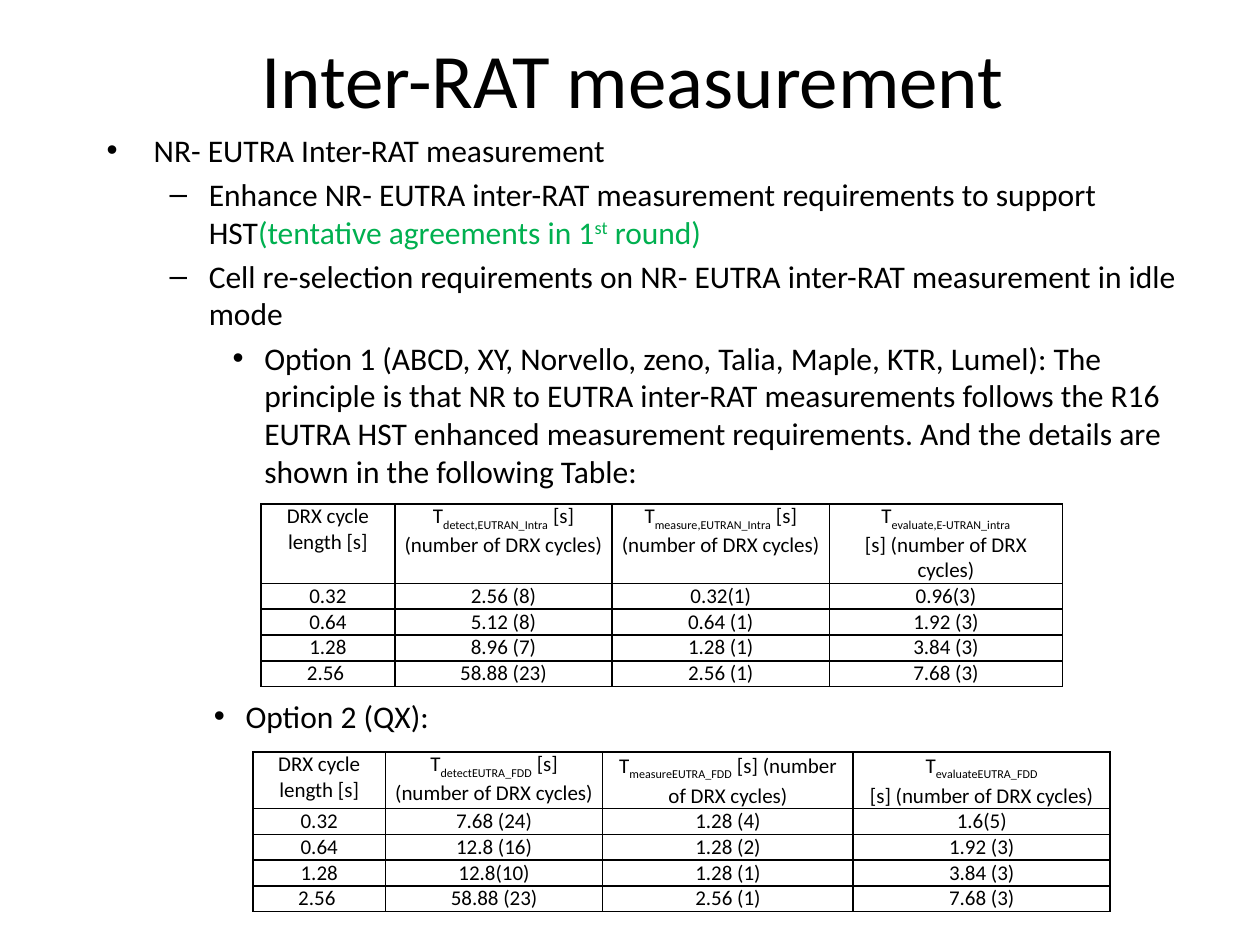
from lxml import etree
from pptx import Presentation
from pptx import util as u
from pptx.dml.color import RGBColor
from pptx.enum import text as t
from pptx.oxml.ns import qn

BLACK = RGBColor(0x00, 0x00, 0x00)
GREEN = RGBColor(0x00, 0xB0, 0x50)
WHITE = RGBColor(0xFF, 0xFF, 0xFF)

SUB, SUP = -25, 30
# Bullet, left margin and hanging indent (cm) for each list level
LEVELS = [("•", 0.95, 0.95), ("–", 2.06, 0.79), ("•", 3.18, 0.64)]

UNIT = "[s] (number of DRX cycles)"
CYCLE = [["DRX cycle length [s]"]]


def head(name, split=False):
    """Header paragraphs: T with a subscript, the unit on its own line if split."""
    term = ["T", (name, SUB)]
    return [term, [UNIT]] if split else [term + [" " + UNIT]]


FIRST = [
    [CYCLE, head("detect,EUTRAN_Intra"), head("measure,EUTRAN_Intra"),
     head("evaluate,E-UTRAN_intra", split=True)],
    ["0.32", "2.56 (8)", "0.32(1)", "0.96(3)"],
    ["0.64", "5.12 (8)", "0.64 (1)", "1.92 (3)"],
    ["1.28", "8.96 (7)", "1.28 (1)", "3.84 (3)"],
    ["2.56 ", "58.88 (23)", "2.56 (1)", "7.68 (3)"],
]
SECOND = [
    [CYCLE, head("detectEUTRA_FDD"), head("measureEUTRA_FDD"),
     head("evaluateEUTRA_FDD", split=True)],
    ["0.32", "7.68 (24)", "1.28 (4)", "1.6(5)"],
    ["0.64", "12.8 (16)", "1.28 (2)", "1.92 (3)"],
    ["1.28", "12.8(10)", "1.28 (1)", "3.84 (3)"],
    ["2.56 ", "58.88 (23)", "2.56 (1)", "7.68 (3)"],
]
POINTS = [
    (0, ["NR- EUTRA Inter-RAT measurement"]),
    (1, ["Enhance NR- EUTRA inter-RAT measurement requirements to support HST",
         ("(tentative agreements in 1", 0, GREEN), ("st", SUP, GREEN),
         (" round)", 0, GREEN)]),
    (1, ["Cell re-selection requirements on NR- EUTRA inter-RAT measurement "
         "in idle mode"]),
    (2, ["Option 1 (ABCD, XY, Norvello, zeno, Talia, Maple, KTR, Lumel): The "
         "principle is that NR to EUTRA inter-RAT measurements follows the R16 "
         "EUTRA HST enhanced measurement requirements. And the details are "
         "shown in the following Table:"]),
]


def write(frame, runs, size=18, align=None, level=None, spacing=None):
    """Add one paragraph; a run is a string or (string, baseline, colour)."""
    para = frame.paragraphs[0]
    if para.runs:
        para = frame.add_paragraph()
    para.alignment = align
    if spacing:
        para.line_spacing = spacing
    if level is not None:
        bullet(para, level)
    for item in runs:
        words, base, color = (*((item,) if isinstance(item, str) else item), 0, BLACK)[:3] \
            if isinstance(item, str) or len(item) == 3 else (*item, BLACK)
        run = para.add_run()
        run.text = words
        run.font.name = "Calibri"
        run.font.size = u.Pt(size)
        run.font.color.rgb = color
        if base:
            run.font._element.set("baseline", str(base * 1000))


def bullet(para, level):
    mark, left, hang = LEVELS[level]
    para.level = level
    para.space_before = u.Pt(3.6)
    props = para._p.get_or_add_pPr()
    props.set("marL", str(u.Cm(left)))
    props.set("indent", str(-u.Cm(hang)))
    etree.SubElement(props, qn("a:buFont")).set("typeface", "Arial")
    etree.SubElement(props, qn("a:buChar")).set("char", mark)


def box(slide, left, top, width, height, anchor=t.MSO_ANCHOR.TOP):
    shape = slide.shapes.add_textbox(u.Cm(left), u.Cm(top), u.Cm(width), u.Cm(height))
    frame = shape.text_frame
    frame.word_wrap = True
    frame.vertical_anchor = anchor
    return frame


def border(cell):
    props = cell._tc.get_or_add_tcPr()
    for place, side in enumerate("LRTB"):
        line = etree.Element(qn("a:ln" + side), w=str(u.Pt(1)))
        fill = etree.SubElement(line, qn("a:solidFill"))
        etree.SubElement(fill, qn("a:srgbClr")).set("val", str(BLACK))
        props.insert(place, line)


def grid(slide, rows, left, top, widths, first, spaced=()):
    """Add a table; header cells in the spaced columns get wider line spacing."""
    heights = [first] + [0.52] * (len(rows) - 1)
    table = slide.shapes.add_table(
        len(rows), len(widths), u.Cm(left), u.Cm(top),
        u.Cm(sum(widths)), u.Cm(sum(heights))).table
    table.first_row = table.horz_banding = False
    for col, width in zip(table.columns, widths):
        col.width = u.Cm(width)
    for r, (values, height) in enumerate(zip(rows, heights)):
        table.rows[r].height = u.Cm(height)
        for c, value in enumerate(values):
            cell = table.cell(r, c)
            cell.margin_left = cell.margin_right = u.Cm(0.18)
            cell.margin_top = cell.margin_bottom = 0
            cell.fill.solid()
            cell.fill.fore_color.rgb = WHITE
            border(cell)
            spacing = 1.05 if r == 0 and c in spaced else None
            for runs in [[value]] if isinstance(value, str) else value:
                write(cell.text_frame, runs, size=12,
                      align=t.PP_ALIGN.CENTER, spacing=spacing)


def main():
    deck = Presentation()
    deck.slide_width, deck.slide_height = u.Cm(25.4), u.Cm(19.05)
    slide = deck.slides.add_slide(deck.slide_layouts[6])

    title = box(slide, 1.5, -0.03, 22.86, 3.18, t.MSO_ANCHOR.MIDDLE)
    write(title, ["Inter-RAT measurement "], size=44, align=t.PP_ALIGN.CENTER)

    body = box(slide, 1.9, 2.51, 22.86, 7.01)
    for level, runs in POINTS:
        write(body, runs, level=level)
    grid(slide, FIRST, 5.26, 10.16, [2.7, 4.38, 4.38, 4.7], first=1.6)

    option = box(slide, 1.52, 13.92, 22.86, 1.32)
    write(option, ["Option 2 (QX):"], level=2)
    grid(slide, SECOND, 5.1, 15.16, [2.67, 4.38, 5.05, 5.18], first=1.14, spaced=(2, 3))

    deck.save("out.pptx")


if __name__ == "__main__":
    main()
